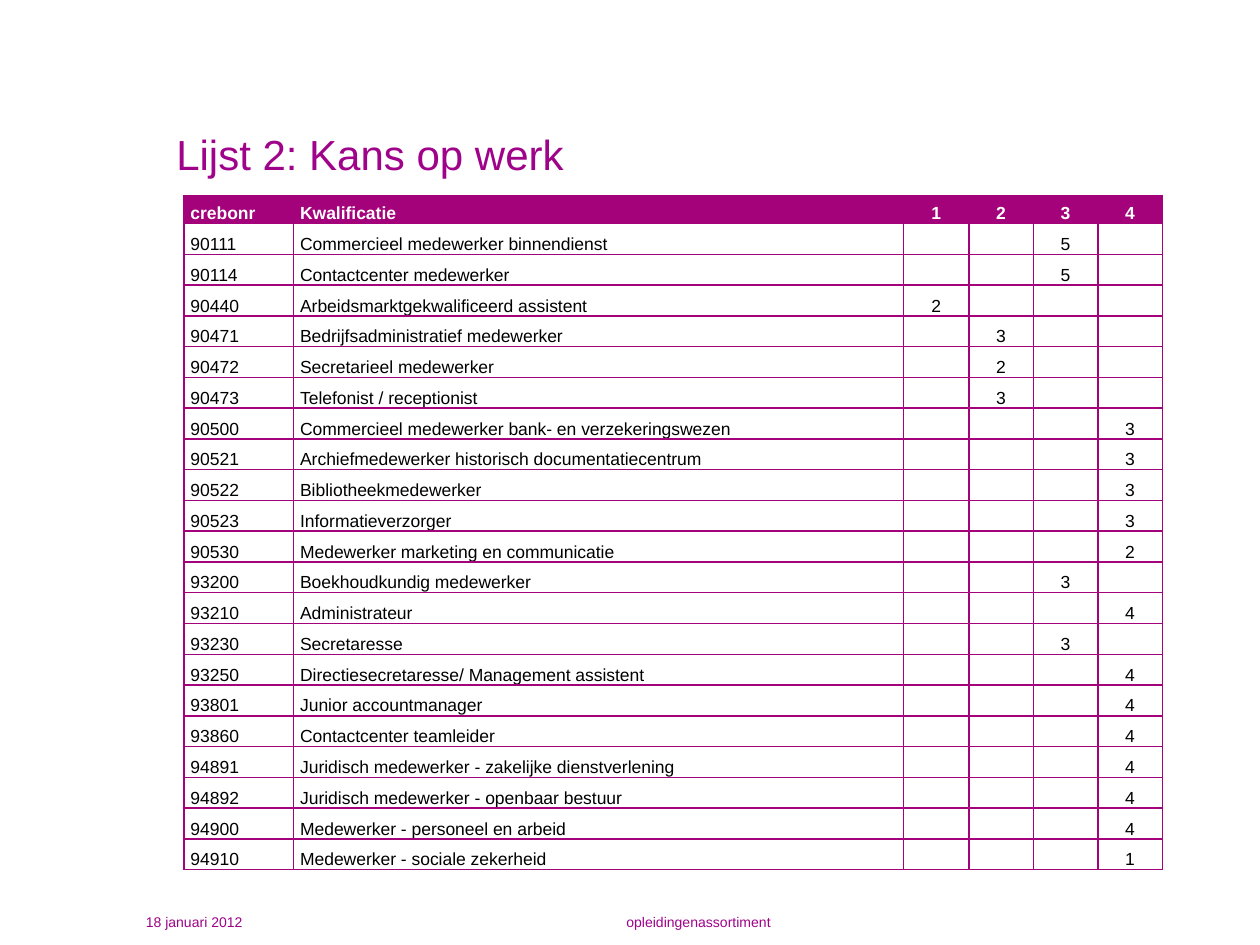
import pptx
import pptx.util
import pptx.dml.color
import pptx.enum.text
import pptx.oxml
import pptx.oxml.ns

Cm = pptx.util.Cm
Pt = pptx.util.Pt
ALIGN = pptx.enum.text.PP_ALIGN
ANCHOR = pptx.enum.text.MSO_ANCHOR
FONT = "Arial"
COLORS = {"title": "9E0389", "table": "A3027B", "head": "FFFFFF", "text": "000000"}

HEADS = ["crebonr", "Kwalificatie", "1", "2", "3", "4"]
WIDTHS = [2.21, 12.29, 1.32, 1.3, 1.3, 1.3]
# Number, qualification, level column, chance of work
JOBS = [
    ("90111", "Commercieel medewerker binnendienst", 3, 5),
    ("90114", "Contactcenter medewerker", 3, 5),
    ("90440", "Arbeidsmarktgekwalificeerd assistent", 1, 2),
    ("90471", "Bedrijfsadministratief medewerker", 2, 3),
    ("90472", "Secretarieel medewerker", 2, 2),
    ("90473", "Telefonist / receptionist", 2, 3),
    ("90500", "Commercieel medewerker bank- en verzekeringswezen", 4, 3),
    ("90521", "Archiefmedewerker historisch documentatiecentrum", 4, 3),
    ("90522", "Bibliotheekmedewerker", 4, 3),
    ("90523", "Informatieverzorger", 4, 3),
    ("90530", "Medewerker marketing en communicatie", 4, 2),
    ("93200", "Boekhoudkundig medewerker", 3, 3),
    ("93210", "Administrateur", 4, 4),
    ("93230", "Secretaresse", 3, 3),
    ("93250", "Directiesecretaresse/ Management assistent", 4, 4),
    ("93801", "Junior accountmanager", 4, 4),
    ("93860", "Contactcenter teamleider", 4, 4),
    ("94891", "Juridisch medewerker - zakelijke dienstverlening", 4, 4),
    ("94892", "Juridisch medewerker - openbaar bestuur", 4, 4),
    ("94900", "Medewerker - personeel en arbeid", 4, 4),
    ("94910", "Medewerker - sociale zekerheid", 4, 1),
]


def style(par, size, color, bold=False, align=ALIGN.LEFT):
    par.alignment = align
    for run in par.runs:
        run.font.name = FONT
        run.font.size = Pt(size)
        run.font.bold = bold
        run.font.color.rgb = pptx.dml.color.RGBColor.from_string(COLORS[color])


def add_title(slide, text):
    title = slide.shapes.title
    title.left, title.top, title.width, title.height = Cm(3.3), Cm(2.51), Cm(20.83), Cm(1.19)
    title.text_frame.text = text
    title.text_frame.vertical_anchor = ANCHOR.MIDDLE
    style(title.text_frame.paragraphs[0], 24, "title")


def add_foot(slide, text, left, width, align):
    box = slide.shapes.add_textbox(Cm(left), Cm(18.29), Cm(width), Cm(0.56))
    box.text_frame.word_wrap = True
    box.text_frame.text = text
    style(box.text_frame.paragraphs[0], 8, "title", align=align)


def add_lines(cell):
    props = cell._tc.get_or_add_tcPr()
    for spot, side in enumerate(("lnL", "lnR", "lnT", "lnB")):
        line = pptx.oxml.parse_xml(
            f'<a:{side} {pptx.oxml.ns.nsdecls("a")} w="{Pt(1)}"><a:solidFill>'
            f'<a:srgbClr val="{COLORS["table"]}"/></a:solidFill></a:{side}>')
        props.insert(spot, line)


def fill_cell(cell, text, head, align):
    cell.margin_left = cell.margin_right = Cm(0.13)
    cell.margin_top = cell.margin_bottom = 0
    cell.vertical_anchor = ANCHOR.BOTTOM
    if head:
        cell.fill.solid()
        cell.fill.fore_color.rgb = pptx.dml.color.RGBColor.from_string(COLORS["table"])
    else:
        cell.fill.background()
    add_lines(cell)
    cell.text_frame.text = text
    par = cell.text_frame.paragraphs[0]
    par.line_spacing = 1.15
    style(par, 10, "head" if head else "text", head, align)
    if not text:
        # Keep empty cells as low as the filled ones
        par._p.append(pptx.oxml.parse_xml(
            f'<a:endParaRPr {pptx.oxml.ns.nsdecls("a")} sz="1000"/>'))


def add_list(slide):
    rows = [HEADS]
    for code, name, level, chance in JOBS:
        rows.append([code, name] + [str(chance) if level == n else "" for n in range(1, 5)])
    head, step = 0.57, 0.62
    frame = slide.shapes.add_table(len(rows), len(HEADS), Cm(3.71), Cm(3.94),
                                   Cm(sum(WIDTHS)), Cm(head + step * len(JOBS)))
    table = frame.table
    table.horz_banding = False
    for col, width in zip(table.columns, WIDTHS):
        col.width = Cm(width)
    for r, row in enumerate(rows):
        table.rows[r].height = Cm(step if r else head)
        for c, text in enumerate(row):
            fill_cell(table.cell(r, c), text, r == 0, ALIGN.CENTER if c > 1 else ALIGN.LEFT)


def main():
    deck = pptx.Presentation()
    deck.slide_width, deck.slide_height = Cm(25.4), Cm(19.05)
    slide = deck.slides.add_slide(deck.slide_layouts[5])
    add_list(slide)
    add_title(slide, "Lijst 2: Kans op werk")
    # Footer
    add_foot(slide, "18 januari 2012", 2.69, 5.59, ALIGN.LEFT)
    add_foot(slide, "opleidingenassortiment", 8.18, 11.81, ALIGN.CENTER)
    deck.save("out.pptx")


if __name__ == "__main__":
    main()
